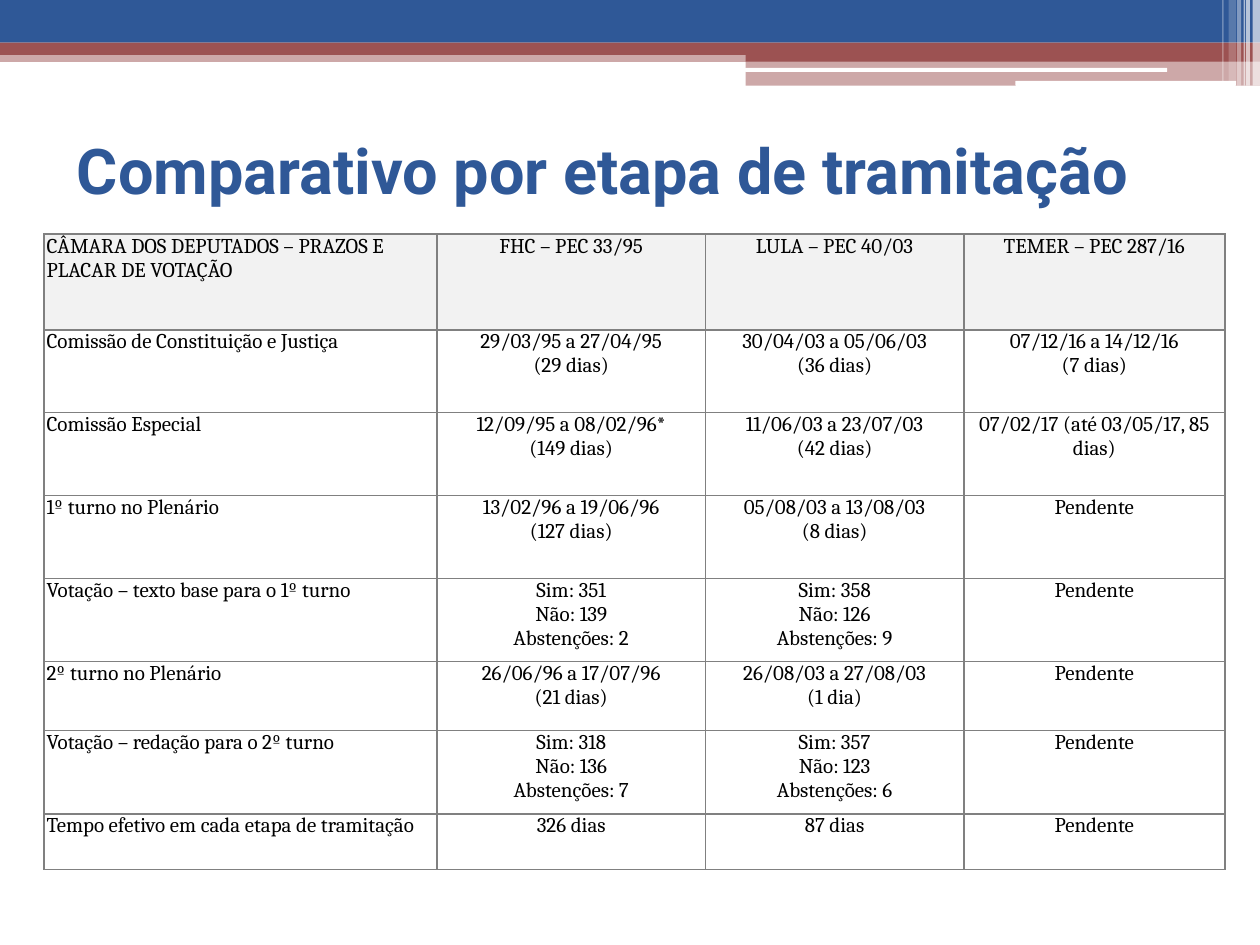
from lxml import etree
from pptx import Presentation
from pptx.dml.color import RGBColor
from pptx.enum import shapes, text
from pptx.oxml.ns import qn
from pptx.util import Cm, Pt

BLUE = RGBColor(0x2F, 0x58, 0x97)
RED = RGBColor(0x9C, 0x52, 0x52)
WHITE = RGBColor(0xFF, 0xFF, 0xFF)
BLACK = RGBColor(0, 0, 0)
PALE = RGBColor(0xF2, 0xF2, 0xF2)
GREY = RGBColor(0x80, 0x80, 0x80)

BANDS = [
    (0, 1.02, 25.4, 0.23, RED, 50),
    (0, 0, 25.4, 0.86, BLUE, 100),
    (0, 0.86, 25.4, 0.25, RED, 100),
    (15.03, 0.99, 10.37, 0.25, RED, 100),
    (15.03, 1.23, 10.37, 0.5, RED, 50),
]
RULES = [(15.02, 1.37, 8.51, 0.08), (20.47, 1.63, 4.45, 0.1)]
STRIPS = [
    (25.25, 0.15, 1.73, 65),
    (25.12, 0.08, 1.73, 65),
    (25.07, 0.03, 1.73, 60),
    (24.94, 0.08, 1.73, 40),
    (24.77, 0.15, 1.63, 20),
    (24.64, 0.03, 1.63, 30),
]
COLS = [7.92, 5.41, 5.21, 5.26]
ROWS = [1.93, 1.67, 1.67, 1.67, 1.68, 1.39, 1.68, 1.12]
CELLS = [
    ["CÂMARA DOS DEPUTADOS – PRAZOS E PLACAR DE VOTAÇÃO",
     "FHC – PEC 33/95", "LULA – PEC 40/03", "TEMER – PEC 287/16"],
    ["Comissão de Constituição e Justiça", "29/03/95 a 27/04/95\n(29 dias)",
     "30/04/03 a 05/06/03\n(36 dias)", "07/12/16 a 14/12/16\n(7 dias)"],
    ["Comissão Especial", "12/09/95 a 08/02/96*\n(149 dias)",
     "11/06/03 a 23/07/03\n(42 dias)", "07/02/17 (até 03/05/17, 85 dias)"],
    ["1º turno no Plenário", "13/02/96 a 19/06/96\n(127 dias)",
     "05/08/03 a 13/08/03\n(8 dias)", "Pendente"],
    ["Votação – texto base para o 1º turno", "Sim: 351\nNão: 139\nAbstenções: 2",
     "Sim: 358\nNão: 126\nAbstenções: 9", "Pendente"],
    ["2º turno no Plenário", "26/06/96 a 17/07/96\n(21 dias)",
     "26/08/03 a 27/08/03\n(1 dia)", "Pendente"],
    ["Votação – redação para o 2º turno", "Sim: 318\nNão: 136\nAbstenções: 7",
     "Sim: 357\nNão: 123\nAbstenções: 6", "Pendente"],
    ["Tempo efetivo em cada etapa de tramitação", "326 dias", "87 dias", "Pendente"],
]


def add_bar(slide, x, y, w, h, color, alpha=100, kind=shapes.MSO_SHAPE.RECTANGLE):
    """Add a plain bar, see-through when alpha is below 100."""
    bar = slide.shapes.add_shape(kind, Cm(x), Cm(y), Cm(w), Cm(h))
    bar.shadow.inherit = False
    bar.fill.solid()
    bar.fill.fore_color.rgb = color
    bar.line.fill.background()
    if alpha < 100:
        tone = bar.fill._xPr.find(qn("a:solidFill"))[0]
        etree.SubElement(tone, qn("a:alpha"), val=str(alpha * 1000))


def add_run(para, words, face, size, color, bold=False):
    """Add one styled run to a paragraph."""
    run = para.add_run()
    run.text = words
    font = run.font
    font.name, font.size, font.bold = face, Pt(size), bold
    font.color.rgb = color


def add_title(slide, words):
    """Add the slide title."""
    box = slide.shapes.add_textbox(Cm(1.3), Cm(1.93), Cm(22.86), Cm(2.97))
    frame = box.text_frame
    frame.word_wrap = True
    frame.vertical_anchor = text.MSO_ANCHOR.MIDDLE
    add_run(frame.paragraphs[0], words, "Roboto", 36, BLUE, True)


def add_edges(cell):
    """Draw a thin grey border on all four sides of a cell."""
    props = cell._tc.get_or_add_tcPr()
    for spot, side in enumerate(("lnL", "lnR", "lnT", "lnB")):
        line = etree.Element(qn(f"a:{side}"), w=str(Pt(1)))
        fill = etree.SubElement(line, qn("a:solidFill"))
        etree.SubElement(fill, qn("a:srgbClr"), val=str(GREY))
        props.insert(spot, line)


def fill_cell(cell, words, shade, align):
    """Style a cell and write one paragraph per line of words."""
    cell.margin_left = cell.margin_right = Cm(0.05)
    cell.margin_top = cell.margin_bottom = 0
    cell.fill.solid()
    cell.fill.fore_color.rgb = shade
    add_edges(cell)
    frame = cell.text_frame
    for i, line in enumerate(words.split("\n")):
        para = frame.add_paragraph() if i else frame.paragraphs[0]
        para.alignment = align
        add_run(para, line, "Cambria", 12, BLACK)


def add_grid(slide):
    """Add the table of stages and dates."""
    grid = slide.shapes.add_table(
        len(ROWS), len(COLS), Cm(0.89), Cm(4.72), Cm(sum(COLS)), Cm(sum(ROWS))
    ).table
    for col, width in zip(grid.columns, COLS):
        col.width = Cm(width)
    for row, height in zip(grid.rows, ROWS):
        row.height = Cm(height)
    for r, line in enumerate(CELLS):
        for c, words in enumerate(line):
            align = text.PP_ALIGN.CENTER if c else text.PP_ALIGN.LEFT
            fill_cell(grid.cell(r, c), words, WHITE if r else PALE, align)


def main():
    """Build and save the slide."""
    deck = Presentation()
    deck.slide_width, deck.slide_height = Cm(25.4), Cm(19.05)
    slide = deck.slides.add_slide(deck.slide_layouts[6])
    for band in BANDS:
        add_bar(slide, *band)
    for rule in RULES:
        add_bar(slide, *rule, WHITE, kind=shapes.MSO_SHAPE.ROUNDED_RECTANGLE)
    for x, w, h, alpha in STRIPS:
        add_bar(slide, x, 0, w, h, WHITE, alpha)
    add_title(slide, "Comparativo por etapa de tramitação")
    add_grid(slide)
    deck.save("out.pptx")


if __name__ == "__main__":
    main()
